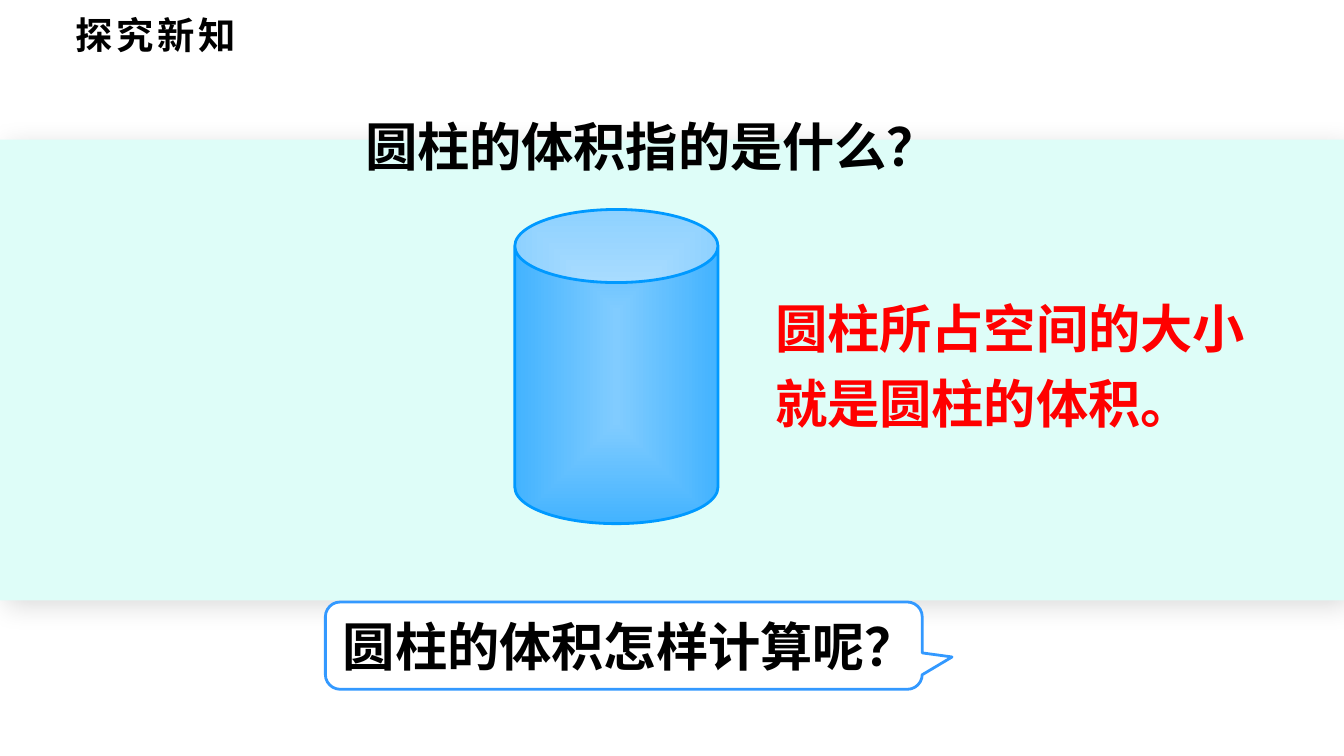
import pptx
import pptx.util
import pptx.dml.color
import pptx.enum.shapes
import pptx.enum.text
import pptx.oxml.ns
from lxml import etree

Cm = pptx.util.Cm
Pt = pptx.util.Pt
SHAPE = pptx.enum.shapes.MSO_SHAPE
ANCHOR = pptx.enum.text.MSO_ANCHOR
qn = pptx.oxml.ns.qn

FONT = "Noto Sans CJK SC"
COLORS = {
    "text": "000000",
    "answer": "FF0000",
    "band": "DEFDF8",
    "white": "FFFFFF",
    "can_center": "81CCFF",
    "can_edge": "43B3FF",
    "can_line": "0099FF",
    "callout_line": "3399FF",
}


def rgb(name):
    return pptx.dml.color.RGBColor.from_string(COLORS[name])


def add_box(s, kind, box, fill=None, line=None):
    sp = s.shapes.add_shape(kind, *map(Cm, box))
    sp.shadow.inherit = False
    if fill:
        sp.fill.solid()
        sp.fill.fore_color.rgb = rgb(fill)
    if line:
        sp.line.color.rgb = rgb(line)
        sp.line.width = Pt(1.5)
    else:
        sp.line.fill.background()
    return sp


def write(tf, text, size=28, color="text", wrap=True, line_spacing=None, spacing=None):
    tf.word_wrap = wrap
    p = tf.paragraphs[0]
    p.alignment = pptx.enum.text.PP_ALIGN.LEFT
    if line_spacing:
        p.line_spacing = line_spacing
    r = p.add_run()
    r.text = text
    r.font.size = Pt(size)
    r.font.bold = True
    r.font.color.rgb = rgb(color)
    r.font.name = FONT
    rpr = r.font._element
    rpr.set("lang", "zh-CN")
    etree.SubElement(rpr, qn("a:ea"), typeface=FONT)
    if spacing:
        rpr.set("spc", str(spacing * 100))


def add_text(s, box, text, **style):
    write(s.shapes.add_textbox(*map(Cm, box)).text_frame, text, **style)


def add_band(s, box):
    sp = add_box(s, SHAPE.RECTANGLE, box, "band")
    effects = sp._element.spPr.find(qn("a:effectLst"))
    shadow = etree.SubElement(
        effects, qn("a:outerShdw"), blurRad=str(Pt(15)), dist=str(Pt(5)),
        dir=str(45 * 60000), algn="ctr", rotWithShape="0")
    color = etree.SubElement(shadow, qn("a:srgbClr"), val=COLORS["text"])
    etree.SubElement(color, qn("a:alpha"), val="15000")


def add_cylinder(s, box):
    sp = add_box(s, SHAPE.CAN, box, line="can_line")
    sp.adjustments[0] = 0.36
    sp.fill.gradient()
    for stop, position, name in zip(sp.fill.gradient_stops, (0, 1), ("can_center", "can_edge")):
        stop.position = position
        stop.color.rgb = rgb(name)
    grad = sp._element.spPr.find(qn("a:gradFill"))
    lin = grad.find(qn("a:lin"))
    path = etree.Element(qn("a:path"), path="rect")
    etree.SubElement(path, qn("a:fillToRect"), l="50000", t="50000", r="50000", b="50000")
    grad.replace(lin, path)


def add_callout(s, box, text):
    sp = add_box(s, SHAPE.ROUNDED_RECTANGULAR_CALLOUT, box, "white", "callout_line")
    for i, value in enumerate((0.55, 0.13, 0.17)):
        sp.adjustments[i] = value
    tf = sp.text_frame
    tf.margin_right = 0
    tf.vertical_anchor = ANCHOR.MIDDLE
    write(tf, text)


def main():
    prs = pptx.Presentation()
    prs.slide_width, prs.slide_height = Cm(25.4), Cm(14.29)
    s = prs.slides.add_slide(prs.slide_layouts[6])
    add_band(s, (0, 2.64, 25.4, 8.71))
    add_text(s, (1.17, 0.1, 3.63, 1.12), "探究新知", size=20, wrap=False, spacing=2)
    add_cylinder(s, (9.73, 3.96, 3.84, 5.94))
    add_callout(s, (6.15, 11.38, 11.28, 1.65), "圆柱的体积怎样计算呢？")
    add_text(s, (14.4, 5.23, 10.29, 3.12), "圆柱所占空间的大小就是圆柱的体积。",
             color="answer", line_spacing=1.2)
    add_text(s, (6.65, 2.03, 11.43, 1.45), "圆柱的体积指的是什么？", wrap=False)
    prs.save("out.pptx")


if __name__ == "__main__":
    main()
